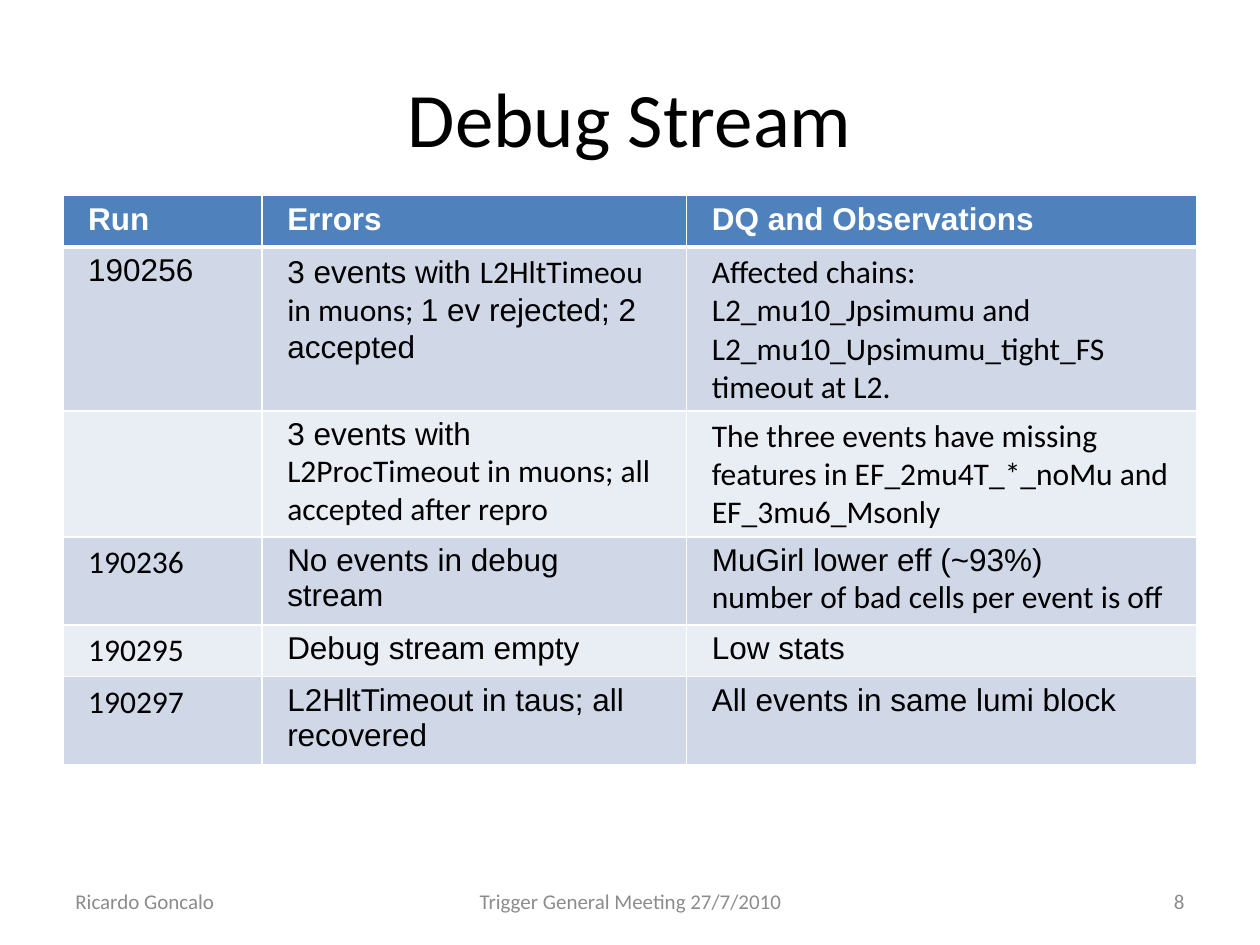
from pptx import Presentation
from pptx.dml.color import RGBColor
from pptx.enum.text import MSO_ANCHOR as Anchor, PP_ALIGN as Align
from pptx.oxml.ns import qn
from pptx.util import Inches, Pt
from lxml.etree import SubElement

BLACK = RGBColor(0x00, 0x00, 0x00)
WHITE = RGBColor(0xFF, 0xFF, 0xFF)
GRAY = RGBColor(0x8C, 0x8C, 0x8C)
HEADER_BLUE = RGBColor(0x4F, 0x81, 0xBD)
BAND_DARK = RGBColor(0xD0, 0xD8, 0xE8)
BAND_LIGHT = RGBColor(0xE9, 0xED, 0xF4)
ARIAL, CALIBRI = "Arial", "Calibri"


class SlideBuilder:
    """Holds the table style and the current slide."""

    cell_size = 18
    cell_margins = (0.2, 0.05, 0.2, 0.05)
    thin, thick = 1, 3

    def __init__(self, page):
        self.page = page

    def span(self, para, text, font, size, color, bold=False):
        span = para.add_run()
        span.text = text
        span.font.name = font
        span.font.size = Pt(size)
        span.font.bold = bold
        span.font.color.rgb = color

    def text(self, left, top, width, height, words, size, color, align):
        box = self.page.shapes.add_textbox(
            Inches(left), Inches(top), Inches(width), Inches(height))
        frame = box.text_frame
        frame.word_wrap = True
        frame.vertical_anchor = Anchor.MIDDLE
        para = frame.paragraphs[0]
        para.alignment = align
        self.span(para, words, CALIBRI, size, color)

    def border(self, cell, side, width):
        line = SubElement(cell._tc.get_or_add_tcPr(), qn(f"a:ln{side}"), w=str(Pt(width)))
        fill = SubElement(line, qn("a:solidFill"))
        SubElement(fill, qn("a:srgbClr"), val=str(WHITE))

    def cell(self, cell, paragraphs, row):
        header = row == 0
        (cell.margin_left, cell.margin_top,
         cell.margin_right, cell.margin_bottom) = map(Inches, self.cell_margins)
        # Borders come before the fill in the cell properties
        widths = {"L": self.thin, "R": self.thin,
                  "T": self.thick if row == 1 else self.thin,
                  "B": self.thick if header else self.thin}
        for side, width in widths.items():
            self.border(cell, side, width)
        cell.fill.solid()
        band = BAND_DARK if row % 2 else BAND_LIGHT
        cell.fill.fore_color.rgb = HEADER_BLUE if header else band
        frame = cell.text_frame
        for index, spans in enumerate(paragraphs):
            para = frame.add_paragraph() if index else frame.paragraphs[0]
            for text, font in spans:
                self.span(para, text, font, self.cell_size,
                          WHITE if header else BLACK, header)

    def table(self, left, top, widths, row_height, rows):
        table = self.page.shapes.add_table(
            len(rows), len(widths), Inches(left), Inches(top),
            Inches(sum(widths)), Inches(row_height * len(rows))).table
        for column, width in zip(table.columns, widths):
            column.width = Inches(width)
        for row, contents in enumerate(rows):
            table.rows[row].height = Inches(row_height)
            for column, paragraphs in enumerate(contents):
                self.cell(table.cell(row, column), paragraphs, row)


def line(text, font=ARIAL):
    """A cell with one paragraph in one font."""
    return [[(text, font)]]


RUN_ROWS = [
    [line("Run"), line("Errors"), line("DQ and Observations")],
    [line("190256"),
     [[("3 events with ", ARIAL), ("L2HltTimeou in muons; ", CALIBRI),
       ("1 ev rejected; 2 accepted", ARIAL)]],
     line("Affected chains: L2_mu10_Jpsimumu and "
          "L2_mu10_Upsimumu_tight_FS timeout at L2.", CALIBRI)],
    [[],
     [[("3 events with ", ARIAL),
       ("L2ProcTimeout in muons; all accepted after repro", CALIBRI)]],
     line("The three events have missing features in "
          "EF_2mu4T_*_noMu and EF_3mu6_Msonly", CALIBRI)],
    [line("190236", CALIBRI), line("No events in debug stream"),
     [[("MuGirl lower eff (~93%)", ARIAL)],
      [("number of bad cells per event is off", CALIBRI)]]],
    [line("190295", CALIBRI), line("Debug stream empty"), line("Low stats")],
    [line("190297", CALIBRI), line("L2HltTimeout in taus; all recovered"),
     line("All events in same lumi block")],
]

FOOTERS = [
    (0.5, 2.33, "Ricardo Goncalo", Align.LEFT),
    (3.42, 3.17, "Trigger General Meeting 27/7/2010", Align.CENTER),
    (7.17, 2.33, "8", Align.RIGHT),
]


def main():
    deck = Presentation()
    deck.slide_width, deck.slide_height = Inches(10), Inches(7.5)
    builder = SlideBuilder(deck.slides.add_slide(deck.slide_layouts[6]))

    # Title
    builder.text(0.5, 0.3, 9, 1.25, "Debug Stream", 44, BLACK, Align.CENTER)

    # Table of runs
    builder.table(0.5, 1.55, (1.58, 3.37, 4.05), 0.41, RUN_ROWS)

    # Footer
    for left, width, words, align in FOOTERS:
        builder.text(left, 6.95, width, 0.4, words, 12, GRAY, align)

    deck.save("out.pptx")


if __name__ == "__main__":
    main()
